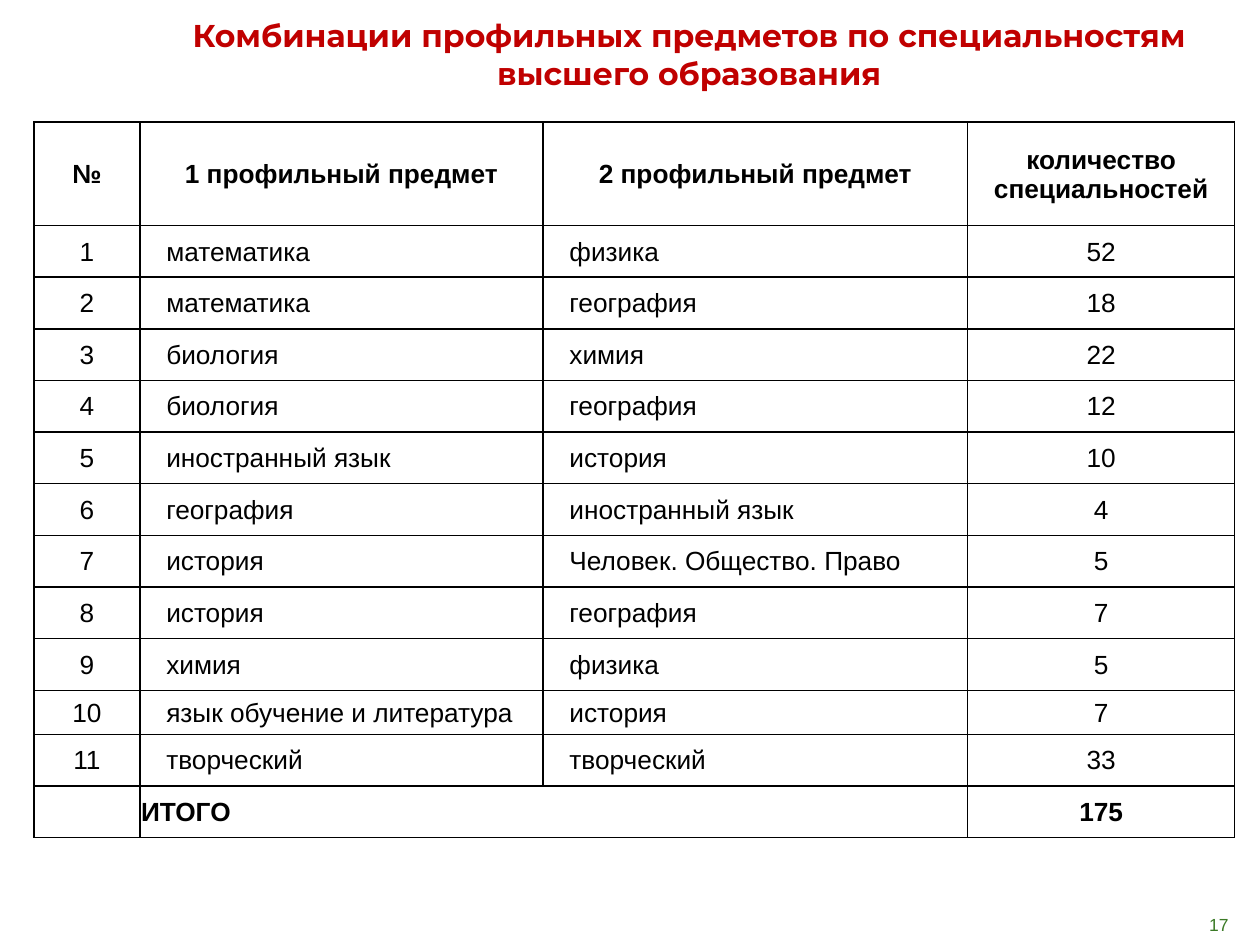
from lxml import etree
from pptx import Presentation
from pptx import util as u
from pptx.dml.color import RGBColor
from pptx.enum import text
from pptx.oxml.ns import qn

COLORS = {"title": "C00000", "ink": "000000", "number": "3B7A26"}
TITLE = "Комбинации профильных предметов по специальностям высшего образования"
PAGE_NUMBER = "17"
HEADER = ("№", "1 профильный предмет", "2 профильный предмет", "количество специальностей")
COMBINATIONS = [
    ("математика", "физика", 52),
    ("математика", "география", 18),
    ("биология", "химия", 22),
    ("биология", "география", 12),
    ("иностранный язык", "история", 10),
    ("география", "иностранный язык", 4),
    ("история", "Человек. Общество. Право", 5),
    ("история", "география", 7),
    ("химия", "физика", 5),
    ("язык обучение и литература", "история", 7),
    ("творческий", "творческий", 33),
]
TOTAL_LABEL = "ИТОГО"
COLUMN_WIDTHS = (0.84, 3.2, 3.37, 2.12)
HEADER_HEIGHT, ROW_HEIGHT, LOW_HEIGHT = 0.82, 0.41, 0.35
LOW_ROW = 10
SUBJECT_COLUMNS = (1, 2)
ALIGN = text.PP_ALIGN


def write(frame, words, size, font, color, align, bold=False):
    para = frame.paragraphs[0]
    para.alignment = align
    span = para.add_run()
    span.text = words
    span.font.size = u.Pt(size)
    span.font.name = font
    span.font.bold = bold
    span.font.color.rgb = RGBColor.from_string(COLORS[color])
    return para


def add_box(page, left, top, width, height):
    box = page.shapes.add_textbox(*map(u.Inches, (left, top, width, height)))
    box.text_frame.word_wrap = True
    return box.text_frame


def style_cell(cell):
    cell.margin_left = cell.margin_right = cell.margin_top = u.Inches(0.01)
    cell.margin_bottom = 0
    cell.vertical_anchor = text.MSO_ANCHOR.MIDDLE
    properties = cell._tc.get_or_add_tcPr()
    for side in ("lnL", "lnR", "lnT", "lnB"):
        line = etree.SubElement(properties, qn(f"a:{side}"), w=str(u.Pt(1)))
        fill = etree.SubElement(line, qn("a:solidFill"))
        etree.SubElement(fill, qn("a:srgbClr"), val=COLORS["ink"])
    cell.fill.background()


def add_combinations(page):
    total = sum(count for _, _, count in COMBINATIONS)
    rows = [HEADER]
    rows += [(number, *combination) for number, combination in enumerate(COMBINATIONS, 1)]
    rows.append(("", TOTAL_LABEL, "", total))
    last = len(rows) - 1
    heights = [HEADER_HEIGHT] + [ROW_HEIGHT] * last
    heights[LOW_ROW] = LOW_HEIGHT

    area = map(u.Inches, (0.27, 0.97, sum(COLUMN_WIDTHS), sum(heights)))
    table = page.shapes.add_table(len(rows), len(COLUMN_WIDTHS), *area).table
    table.first_row = table.horz_banding = False
    for column, width in zip(table.columns, COLUMN_WIDTHS):
        column.width = u.Inches(width)
    for row, height in zip(table.rows, heights):
        row.height = u.Inches(height)

    for r, values in enumerate(rows):
        for c, value in enumerate(values):
            cell = table.cell(r, c)
            style_cell(cell)
            if value == "":
                continue
            subject = c in SUBJECT_COLUMNS and r > 0
            para = write(cell.text_frame, str(value), 15, "Arial", "ink",
                         ALIGN.LEFT if subject else ALIGN.CENTER, r in (0, last))
            if subject and r < last:
                para._p.get_or_add_pPr().set("indent", str(u.Inches(0.2)))
    table.cell(last, SUBJECT_COLUMNS[0]).merge(table.cell(last, SUBJECT_COLUMNS[1]))


def main():
    deck = Presentation()
    deck.slide_width, deck.slide_height = u.Inches(10), u.Inches(7.5)
    page = deck.slides.add_slide(deck.slide_layouts[6])

    number = add_box(page, 8.92, 7.02, 0.83, 0.4)
    number.margin_left = number.margin_right = number.margin_top = number.margin_bottom = 0
    number.vertical_anchor = text.MSO_ANCHOR.BOTTOM
    write(number, PAGE_NUMBER, 10, "Arial", "number", ALIGN.RIGHT)

    title = add_box(page, 0.94, 0.08, 9.06, 0.71)
    title.auto_size = text.MSO_AUTO_SIZE.SHAPE_TO_FIT_TEXT
    write(title, TITLE, 18, "Montserrat", "title", ALIGN.CENTER, True)

    add_combinations(page)
    deck.save("out.pptx")


if __name__ == "__main__":
    main()
